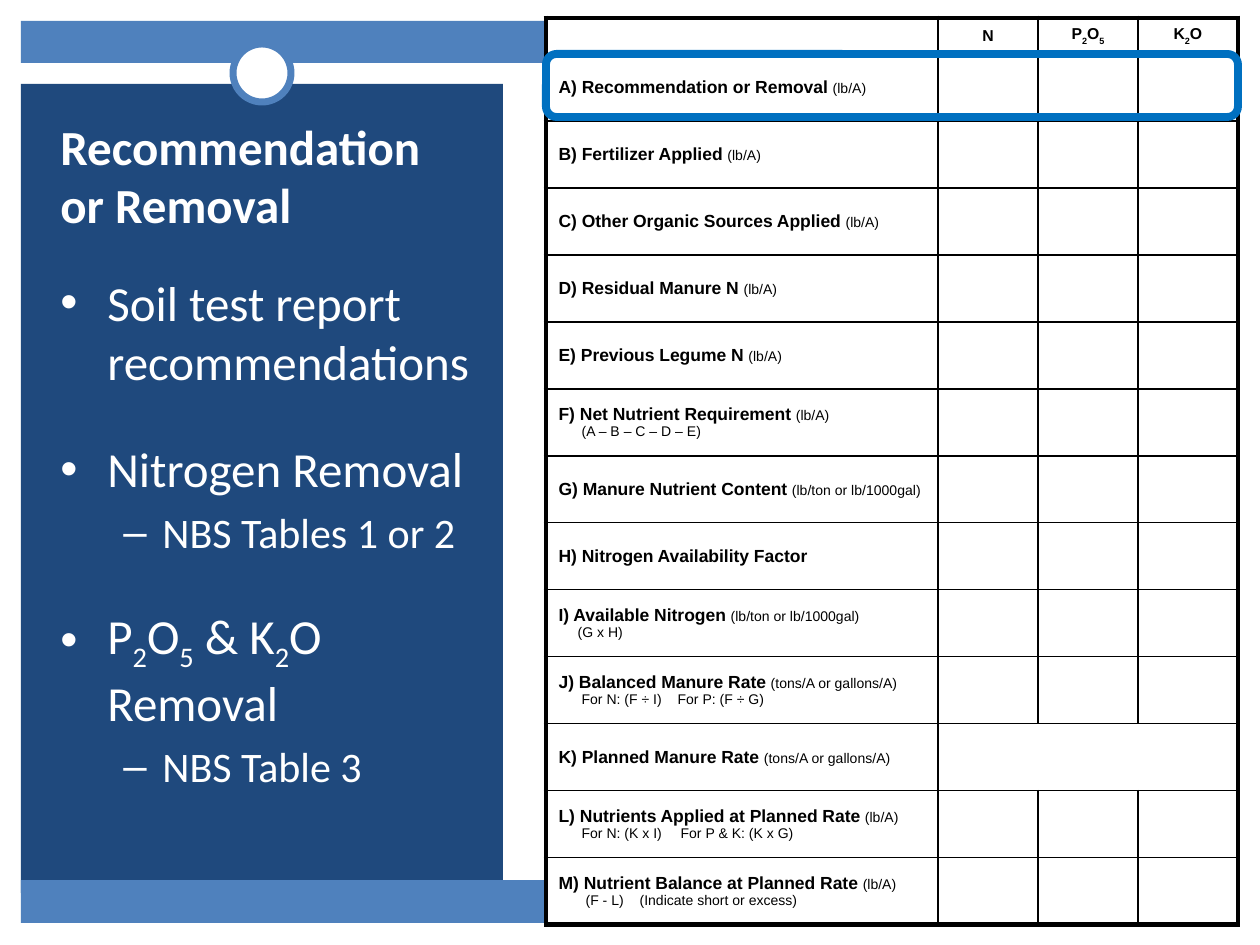
from lxml.etree import SubElement
from pptx import Presentation
from pptx.dml.color import RGBColor as RGB
from pptx.enum.shapes import MSO_SHAPE as Shape
from pptx.enum.text import MSO_ANCHOR as Anchor, PP_ALIGN as Align
from pptx.oxml.ns import qn
from pptx.util import Pt

EMU_PER_PX = 914400 / 126

THEME = {
    "color": {"bar": "4F81BD", "panel": "1F497D", "white": "FFFFFF",
              "black": "000000", "highlight": "0070C0"},
    "title": {"name": "Calibri", "size": Pt(28), "bold": True},
    "bullet": {"name": "Calibri", "size": Pt(28), "bold": False},
    "dash": {"name": "Calibri", "size": Pt(24), "bold": False},
    "header": {"name": "Arial", "size": Pt(9), "bold": True},
    "label": {"name": "Arial", "size": Pt(10), "bold": True},
    "note": {"name": "Arial", "size": Pt(8), "bold": False},
}

# style, bullet mark, text indent, hanging indent, space before in points
BULLET = ("bullet", "•", 47, 47)
DASH = ("dash", "–", 102, 39)
POINTS = [
    (*BULLET, 0, "Soil test report recommendations"),
    (*BULLET, 28, "Nitrogen Removal"),
    (*DASH, 5, "NBS Tables 1 or 2"),
    (*BULLET, 28, "P_2O_5 & K_2O Removal"),
    (*DASH, 5, "NBS Table 3"),
]

HEADERS = ["", "N", "P_2O_5", "K_2O"]
COLUMN_WIDTHS = [392, 100, 100, 100]
HEADER_HEIGHT, ROW_HEIGHT = 36, 67
# label, unit, then the tabbed parts of the second line as (tab stop, text)
ROWS = [
    ("A) Recommendation or Removal", "(lb/A)"),
    ("B) Fertilizer Applied", "(lb/A)"),
    ("C) Other Organic Sources Applied", "(lb/A)"),
    ("D) Residual Manure N", "(lb/A)"),
    ("E) Previous Legume N", "(lb/A)"),
    ("F) Net Nutrient Requirement", "(lb/A)", (23, "(A – B – C – D – E)")),
    ("G) Manure Nutrient Content", "(lb/ton or lb/1000gal)"),
    ("H) Nitrogen Availability Factor", ""),
    ("I) Available Nitrogen", "(lb/ton or lb/1000gal)", (19, "(G x H)")),
    ("J) Balanced Manure Rate", "(tons/A or gallons/A)",
     (23, "For N: (F ÷ I)"), (119, "For P: (F ÷ G)")),
    ("K) Planned Manure Rate", "(tons/A or gallons/A)"),
    ("L) Nutrients Applied at Planned Rate", "(lb/A)",
     (23, "For N: (K x I)"), (122, "For P & K: (K x G)")),
    ("M) Nutrient Balance at Planned Rate", "(lb/A)",
     (27, "(F - L)"), (81, "(Indicate short or excess)")),
]
MERGED_ROW = 11


def px(n):
    return round(n * EMU_PER_PX)


def box(*lengths):
    return [px(n) for n in lengths]


def color(name):
    return RGB.from_string(THEME["color"][name])


def add_run(p, text, style, ink):
    r = p.add_run()
    r.text = text
    for key, value in THEME[style].items():
        setattr(r.font, key, value)
    r.font.color.rgb = color(ink)
    return r


def add_formula(p, text, style, ink, drop=-25):
    """Add runs in which the character after each underscore is a subscript."""
    first, *rest = text.split("_")
    add_run(p, first, style, ink)
    for part in rest:
        sub = add_run(p, part[0], style, ink)
        sub.font._element.set("baseline", str(drop * 1000))
        if part[1:]:
            add_run(p, part[1:], style, ink)


def add_shape(slide, kind, area, fill=None, line=None, width=0):
    sp = slide.shapes.add_shape(kind, *box(*area))
    sp.shadow.inherit = False
    if fill:
        sp.fill.solid()
        sp.fill.fore_color.rgb = color(fill)
    else:
        sp.fill.background()
    if line:
        sp.line.color.rgb = color(line)
        sp.line.width = Pt(width)
    else:
        sp.line.fill.background()


def add_text_frame(slide, area, anchor):
    tf = slide.shapes.add_textbox(*box(*area)).text_frame
    tf.word_wrap = True
    tf.vertical_anchor = anchor
    return tf


def add_points(slide, area):
    tf = add_text_frame(slide, area, Anchor.TOP)
    for i, (style, mark, indent, hang, before, text) in enumerate(POINTS):
        p = tf.add_paragraph() if i else tf.paragraphs[0]
        p.space_before = Pt(before)
        pPr = p._p.get_or_add_pPr()
        pPr.set("marL", str(px(indent)))
        pPr.set("indent", str(-px(hang)))
        SubElement(pPr, qn("a:buFont"), typeface="Arial")
        SubElement(pPr, qn("a:buChar"), char=mark)
        add_formula(p, text, style, "white")


def set_borders(cell, widths):
    tcPr = cell._tc.get_or_add_tcPr()
    for side, width in zip("LRTB", widths):
        ln = SubElement(tcPr, qn(f"a:ln{side}"), w=str(Pt(width)))
        fill = SubElement(ln, qn("a:solidFill"))
        SubElement(fill, qn("a:srgbClr"), val=THEME["color"]["black"])


def fill_label(cell, label, unit, *parts):
    tf = cell.text_frame
    p = tf.paragraphs[0]
    add_run(p, f"{label} " if unit else label, "label", "black")
    if unit:
        add_run(p, unit, "note", "black")
    if parts:
        p = tf.add_paragraph()
        tabs = SubElement(p._p.get_or_add_pPr(), qn("a:tabLst"))
        for stop, _ in parts:
            SubElement(tabs, qn("a:tab"), pos=str(px(stop)), algn="l")
        add_run(p, "".join(f"\t{text}" for _, text in parts), "note", "black")


def style_cells(table):
    """Frame the table with thick borders, rule the inside with thin ones."""
    last_row, last_col = len(table.rows) - 1, len(table.columns) - 1
    for i, row in enumerate(table.rows):
        for j, cell in enumerate(row.cells):
            if cell.is_spanned:
                continue
            right = j + cell.span_width - 1
            edges = (j == 0, right == last_col, i == 0, i == last_row)
            set_borders(cell, [3 if edge else 1 for edge in edges])
            cell.fill.solid()
            cell.fill.fore_color.rgb = color("white")
            cell.vertical_anchor = Anchor.MIDDLE
            if not cell.text:
                end = cell.text_frame.paragraphs[0]._p.get_or_add_endParaRPr()
                end.set("sz", "900")


def add_worksheet(slide, left, top):
    heights = [HEADER_HEIGHT] + [ROW_HEIGHT] * len(ROWS)
    area = box(left, top, sum(COLUMN_WIDTHS), sum(heights))
    table = slide.shapes.add_table(len(heights), len(HEADERS), *area).table
    for column, width in zip(table.columns, COLUMN_WIDTHS):
        column.width = px(width)
    for row, height in zip(table.rows, heights):
        row.height = px(height)
    for j, text in enumerate(HEADERS):
        if text:
            p = table.cell(0, j).text_frame.paragraphs[0]
            p.alignment = Align.CENTER
            add_formula(p, text, "header", "black", drop=-30)
    for i, row in enumerate(ROWS, 1):
        fill_label(table.cell(i, 0), *row)
    table.cell(MERGED_ROW, 1).merge(table.cell(MERGED_ROW, 3))
    style_cells(table)


def main():
    prs = Presentation()
    prs.slide_width, prs.slide_height = box(1260, 945)
    slide = prs.slides.add_slide(prs.slide_layouts[6])

    add_shape(slide, Shape.RECTANGLE, (21, 21, 1217, 42), "bar")
    add_shape(slide, Shape.RECTANGLE, (21, 84, 482, 809), "panel")
    add_shape(slide, Shape.OVAL, (233, 44, 58, 58), "white", "bar", 4)
    add_shape(slide, Shape.RECTANGLE, (21, 880, 1217, 43), "bar")
    add_worksheet(slide, 546, 18)
    title = add_text_frame(slide, (48, 107, 418, 136), Anchor.MIDDLE)
    add_run(title.paragraphs[0], "Recommendation or Removal", "title", "white")
    add_points(slide, (48, 266, 450, 614))
    add_shape(slide, Shape.ROUNDED_RECTANGLE, (546, 54, 692, 63),
              line="highlight", width=4.5)
    prs.save("out.pptx")


if __name__ == "__main__":
    main()
